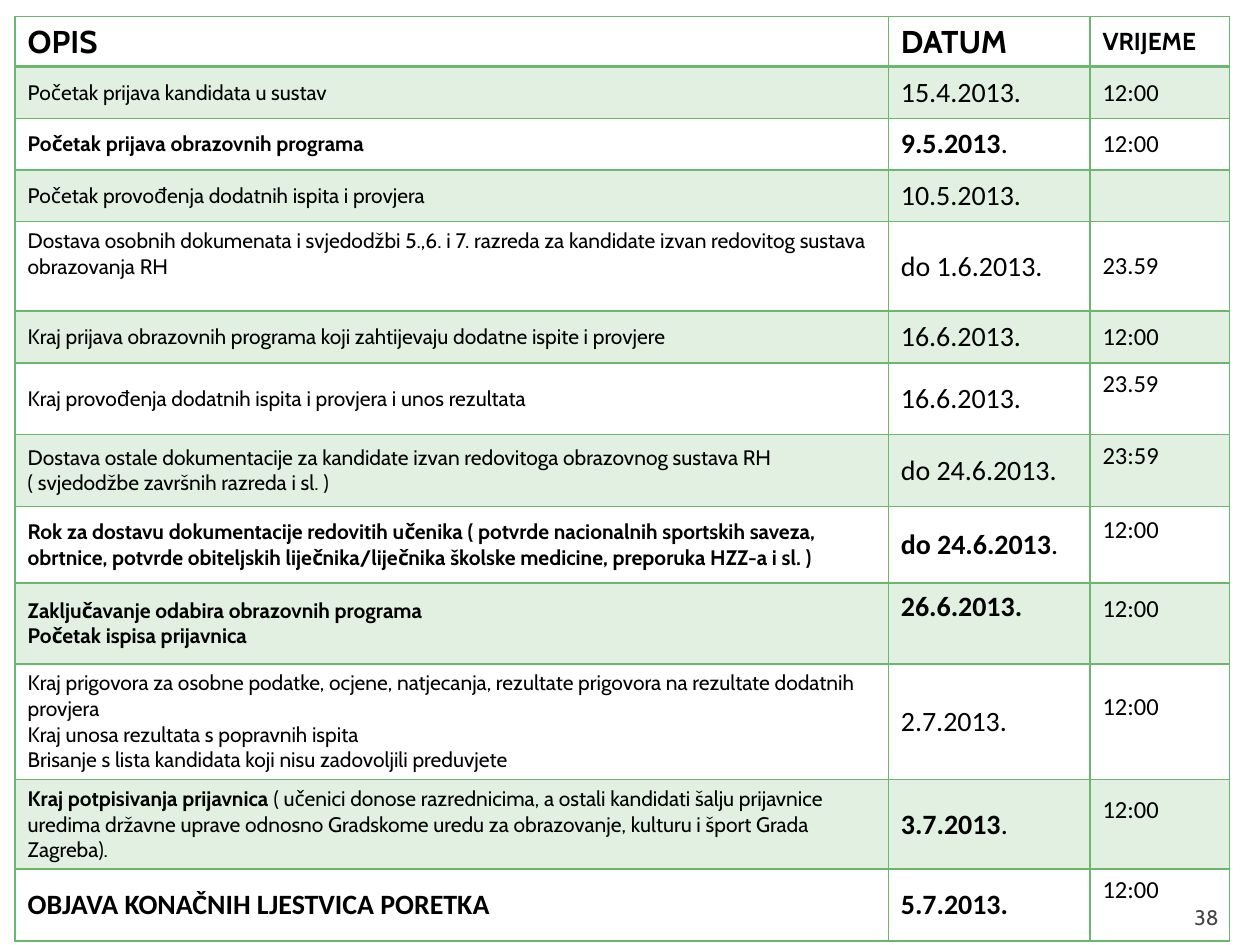
from dataclasses import dataclass

from lxml.etree import SubElement
from pptx import Presentation
from pptx.dml.color import RGBColor
from pptx.enum.text import MSO_ANCHOR, PP_ALIGN
from pptx.oxml.ns import qn
from pptx.util import Inches, Pt


@dataclass(frozen=True)
class Theme:
    green: str = "6BB76D"
    black: str = "000000"
    grey: str = "454545"
    heading_font: str = "Cabin"
    date_font: str = "Calibri"
    heading: int = 18
    date: int = 16
    time: int = 14
    body: int = 12
    side_inset: float = 0.1
    inset: float = 0.05
    band_opacity: int = 20


THEME = Theme()
COLUMN_WIDTHS = (6.93, 1.6, 1.11)
HEADINGS = (("OPIS", THEME.heading), ("DATUM", THEME.heading), ("VRIJEME", THEME.time))
COLUMN_STYLES = (
    (THEME.heading_font, THEME.body),
    (THEME.date_font, THEME.date),
    (THEME.date_font, THEME.time),
)

# Row height, the three texts, and the columns whose text sits one line higher.
# ** encloses bold text, \n starts a paragraph, \v breaks a line.
DEADLINES = (
    (0.41, ("Početak prijava kandidata u sustav", "15.4.2013.", "12:00"), ()),
    (0.41, ("**Početak prijava obrazovnih programa**", "**9.5.2013**.", "12:00"), ()),
    (0.41, ("Početak provođenja dodatnih ispita i provjera", "10.5.2013.", ""), ()),
    (0.71, ("Dostava osobnih dokumenata i svjedodžbi 5.,6. i 7. razreda za kandidate "
            "izvan redovitog sustava obrazovanja RH", "do 1.6.2013.", "23.59"), (0,)),
    (0.41, ("Kraj prijava obrazovnih programa koji zahtijevaju dodatne ispite i provjere",
            "16.6.2013.", "12:00"), ()),
    (0.57, ("Kraj provođenja dodatnih ispita i provjera i unos rezultata",
            "16.6.2013.", "23.59"), (2,)),
    (0.57, ("Dostava ostale dokumentacije za kandidate izvan redovitoga obrazovnog "
            "sustava RH\v( svjedodžbe završnih razreda i sl. )",
            "do 24.6.2013.", "23:59"), (2,)),
    (0.61, ("**Rok za dostavu dokumentacije redovitih učenika ( potvrde nacionalnih "
            "sportskih saveza, obrtnice, potvrde obiteljskih liječnika/liječnika "
            "školske medicine, preporuka HZZ-a i sl. )**",
            "**do 24.6.2013**.", "12:00"), (2,)),
    (0.64, ("**Zaključavanje odabira obrazovnih programa**\n**Početak ispisa prijavnica**",
            "**26.6.2013.**", "12:00"), (1, 2)),
    (0.92, ("Kraj prigovora za osobne podatke, ocjene, natjecanja, rezultate prigovora "
            "na rezultate dodatnih provjera\nKraj unosa rezultata s popravnih ispita\n"
            "Brisanje s lista kandidata koji nisu zadovoljili preduvjete",
            "2.7.2013.", "12:00"), (2,)),
    (0.71, ("**Kraj potpisivanja prijavnica **( učenici donose razrednicima, a ostali "
            "kandidati šalju prijavnice uredima državne uprave odnosno Gradskome uredu "
            "za obrazovanje, kulturu i šport Grada Zagreba).",
            "**3.7.2013**.", "12:00"), (2,)),
    (0.57, ("**OBJAVA KONAČNIH LJESTVICA PORETKA**", "**5.7.2013.**", "12:00"), (2,)),
)


def format_font(font, name, size, color, bold=False):
    for key, value in {"name": name, "size": Pt(size), "bold": bold}.items():
        setattr(font, key, value)
    font.color.rgb = RGBColor.from_string(color)


def write_text(frame, text, name, size, color=THEME.black):
    """Write text with ** for bold, \\n for paragraphs and \\v for line breaks."""
    for index, line in enumerate(text.split("\n")):
        para = frame.add_paragraph() if index else frame.paragraphs[0]
        for part, words in enumerate(line.split("**")):
            for position, piece in enumerate(words.split("\v")):
                if position:
                    para.add_line_break()
                if piece:
                    span = para.add_run()
                    span.text = piece
                    format_font(span.font, name, size, color, bold=part % 2 == 1)


def set_borders(cell, widths):
    """Put the border lines ahead of the fill, as the schema orders them."""
    properties = cell._tc.get_or_add_tcPr()
    for index, (side, width) in enumerate(widths.items()):
        line = SubElement(properties, qn(f"a:{side}"), w=str(Pt(width)))
        fill = SubElement(line, qn("a:solidFill"))
        SubElement(fill, qn("a:srgbClr"), val=THEME.green)
        properties.insert(index, line)


def set_band(cell, banded):
    if not banded:
        cell.fill.background()
        return
    cell.fill.solid()
    cell.fill.fore_color.rgb = RGBColor.from_string(THEME.green)
    color = cell._tc.tcPr.find(f"{qn('a:solidFill')}/{qn('a:srgbClr')}")
    SubElement(color, qn("a:alpha"), val=str(THEME.band_opacity * 1000))


def fill_cell(cell, row, text, name, size, raised=False):
    lift = size / 60 if raised else 0
    values = {
        "vertical_anchor": MSO_ANCHOR.MIDDLE,
        "margin_left": Inches(THEME.side_inset),
        "margin_right": Inches(THEME.side_inset),
        "margin_top": Inches(THEME.inset),
        "margin_bottom": Inches(THEME.inset + lift),
    }
    for key, value in values.items():
        setattr(cell, key, value)
    write_text(cell.text_frame, text, name, size)
    set_band(cell, banded=row % 2 == 1)
    set_borders(cell, {"lnL": 1, "lnR": 1, "lnT": 2 if row == 1 else 1,
                       "lnB": 2 if row == 0 else 1})


def add_schedule(page):
    heights = [0.4] + [height for height, _, _ in DEADLINES]
    table = page.shapes.add_table(
        len(heights), len(COLUMN_WIDTHS), Inches(0.12), Inches(0.13),
        Inches(sum(COLUMN_WIDTHS)), Inches(sum(heights))).table
    table.first_row = table.horz_banding = False
    for column, width in zip(table.columns, COLUMN_WIDTHS):
        column.width = Inches(width)
    for row, height in zip(table.rows, heights):
        row.height = Inches(height)
    for column, (text, size) in enumerate(HEADINGS):
        fill_cell(table.cell(0, column), 0, f"**{text}**", THEME.heading_font, size)
    for row, (_, texts, raised) in enumerate(DEADLINES, start=1):
        for column, text in enumerate(texts):
            name, size = COLUMN_STYLES[column]
            if row == len(DEADLINES) and column == 0:
                name, size = THEME.date_font, THEME.date
            fill_cell(table.cell(row, column), row, text, name, size, column in raised)


def add_page_number(page, number):
    box = page.shapes.add_textbox(Inches(8.97), Inches(7.08), Inches(0.8), Inches(0.3))
    frame = box.text_frame
    for key, value in {"word_wrap": True, "vertical_anchor": MSO_ANCHOR.BOTTOM,
                       "margin_bottom": 0}.items():
        setattr(frame, key, value)
    write_text(frame, number, THEME.heading_font, THEME.body, THEME.grey)
    frame.paragraphs[0].alignment = PP_ALIGN.RIGHT


def main():
    deck = Presentation()
    deck.slide_width, deck.slide_height = Inches(10), Inches(7.5)
    page = deck.slides.add_slide(deck.slide_layouts[6])
    add_page_number(page, "38")
    add_schedule(page)
    deck.save("out.pptx")


if __name__ == "__main__":
    main()
